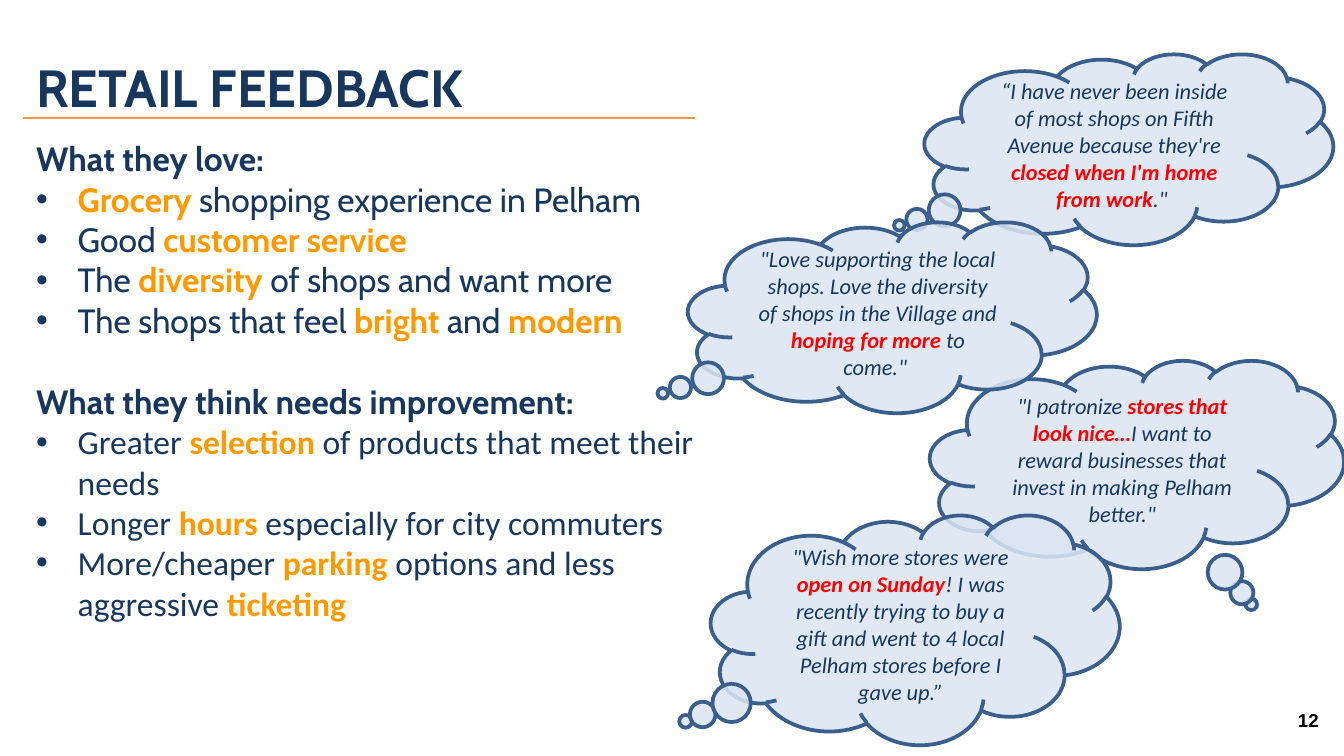
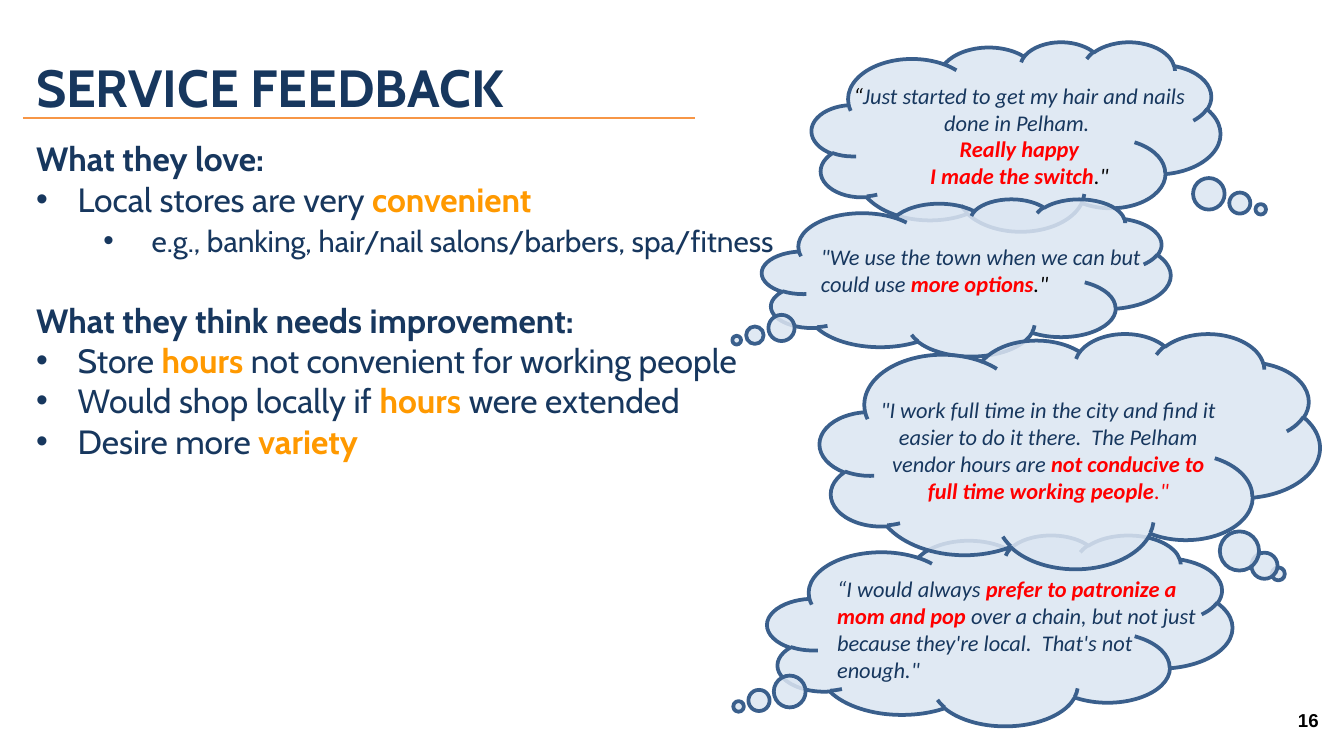
from lxml.etree import SubElement
from pptx import Presentation
from pptx.dml.color import RGBColor
from pptx.enum.shapes import MSO_CONNECTOR, MSO_SHAPE
from pptx.enum.text import MSO_ANCHOR, PP_ALIGN
from pptx.oxml.ns import qn
from pptx.util import Inches, Pt

COLORS = {
    "navy": "17375E", "amber": "FF9900", "rule": "F79646", "red": "FF0000",
    "cloud": "DCE6F2", "outline": "3A5F8C", "black": "000000",
}
# Marks that switch a run format on and off: (colour or None for accent, bold)
MARKS = {"*": (None, True), "~": ("black", False), "^": ("red", False)}
QUOTE = {"font": "Calibri", "size": 12, "italic": True, "accent": "red"}
BULLET = {"indent": 0.31, "hanging": 0.31}
SUB_BULLET = {"indent": 0.86, "hanging": 0.36, "size": 16, "before": 2}
LEFT_TAIL = (-0.562, 0.399)


def rgb(name):
    return RGBColor.from_string(COLORS[name])


def split_runs(marked):
    """Yield (text, mark) pieces; mark is None for plain text."""
    mark, piece = None, ""
    for char in marked:
        if char in MARKS:
            if piece:
                yield piece, mark
            mark, piece = (None if mark == char else char), ""
        else:
            piece += char
    if piece:
        yield piece, mark


def write(paragraph, marked, font="Cabin", size=18, color="navy", bold=False,
          italic=False, accent="amber", align=PP_ALIGN.LEFT, before=0,
          indent=0, hanging=0):
    paragraph.alignment = align
    paragraph.space_before = Pt(before)
    for number, line in enumerate(marked.split("\n")):
        if number:
            paragraph.add_line_break()
        for text, mark in split_runs(line):
            run_color, run_bold = MARKS[mark] if mark else (color, bold)
            run = paragraph.add_run()
            run.text = text
            run.font.name = font
            run.font.size = Pt(size)
            run.font.bold = run_bold
            run.font.italic = italic
            run.font.color.rgb = rgb(run_color or accent)
    if hanging:
        props = paragraph._p.get_or_add_pPr()
        props.set("marL", str(Inches(indent)))
        props.set("indent", str(-Inches(hanging)))
        bullet_color = SubElement(props, qn("a:buClr"))
        SubElement(bullet_color, qn("a:srgbClr"), val=COLORS[color])
        SubElement(props, qn("a:buFont"), typeface="Arial")
        SubElement(props, qn("a:buChar"), char="•")


def write_all(frame, items):
    """Fill a text frame from (marked text, format) pairs."""
    for number, (marked, style) in enumerate(items):
        paragraph = frame.add_paragraph() if number else frame.paragraphs[0]
        write(paragraph, marked, **style)


def add_text(slide, box, items, anchor=MSO_ANCHOR.TOP):
    frame = slide.shapes.add_textbox(*map(Inches, box)).text_frame
    frame.word_wrap = True
    frame.vertical_anchor = anchor
    write_all(frame, items)


def add_cloud(slide, box, tail=LEFT_TAIL, quote=None):
    cloud = slide.shapes.add_shape(MSO_SHAPE.CLOUD_CALLOUT, *map(Inches, box))
    cloud.adjustments[0], cloud.adjustments[1] = tail
    cloud.shadow.inherit = False
    cloud.fill.solid()
    cloud.fill.fore_color.rgb = rgb("cloud")
    fill_color = cloud._element.spPr.find(qn("a:solidFill"))[0]
    SubElement(fill_color, qn("a:alpha"), val="86000")
    cloud.line.color.rgb = rgb("outline")
    cloud.line.width = Pt(2)
    if quote:
        cloud.text_frame.word_wrap = True
        cloud.text_frame.vertical_anchor = MSO_ANCHOR.MIDDLE
        write_all(cloud.text_frame, [(quote, QUOTE | {"align": PP_ALIGN.CENTER})])


def add_quote(slide, box, lines, align=PP_ALIGN.LEFT):
    add_text(slide, box, [(line, QUOTE | {"align": align}) for line in lines])


def add_header(slide, title, page):
    add_text(slide, (0.17, 0.23, 9.65, 0.83),
             [(title, {"size": 28, "bold": True})], MSO_ANCHOR.MIDDLE)
    rule = slide.shapes.add_connector(
        MSO_CONNECTOR.STRAIGHT, *map(Inches, (0.17, 0.88, 5.17, 0.88)))
    rule.line.color.rgb = rgb("rule")
    rule.line.width = Pt(1.25)
    SubElement(rule._element.spPr, qn("a:effectLst"))
    number = {"font": "Arial", "size": 10, "bold": True, "color": "black",
              "align": PP_ALIGN.RIGHT}
    add_text(slide, (7.58, 5.21, 2.33, 0.3), [(page, number)], MSO_ANCHOR.MIDDLE)


def add_feedback(slide, box, loves, improvements, improvement_font="Cabin"):
    heading = {"bold": True}
    items = [("What they love:", heading), *loves,
             ("What they think needs improvement:", heading | {"before": 22})]
    items += [(text, BULLET | {"font": improvement_font}) for text in improvements]
    add_text(slide, box, items)


def build_retail(slide):
    # Thought clouds, from back to front
    add_cloud(slide, (6.92, 2.68, 3.08, 1.55), (0.276, 0.672),
              '"I patronize *stores that look nice…*I want to reward businesses '
              'that invest in making Pelham better."')
    add_cloud(slide, (6.88, 0.4, 3.04, 1.42), quote=(
        "“I have never been inside of most shops on Fifth Avenue because "
        "they're *closed when I'm home from work*.\" "))
    add_cloud(slide, (5.12, 1.65, 3.04, 1.42), quote=(
        '"Love supporting the local shops. Love the diversity of shops in the '
        'Village and *hoping for more* to come." '))
    add_cloud(slide, (5.29, 3.83, 3.04, 1.71), quote=(
        '"Wish more stores were *open on Sunday*! I was recently trying to buy '
        'a gift and went to 4 local Pelham stores before I gave up.”'))
    # Title and findings
    add_header(slide, "RETAIL FEEDBACK", "12")
    loves = ["*Grocery *shopping experience in Pelham",
             "Good *customer service*",
             "The *diversity *of shops and want more",
             "The shops that feel *bright *and *modern*"]
    add_feedback(
        slide, (0.17, 0.98, 5.12, 3.94), [(text, BULLET) for text in loves],
        ["Greater *selection *of products that meet their needs",
         "Longer *hours *especially for city commuters",
         "More/cheaper *parking *options and less aggressive *ticketing*"],
        improvement_font="Calibri")


def build_service(slide):
    # Thought clouds, from back to front
    add_cloud(slide, (6.04, 0.31, 3.04, 1.41), (0.599, 0.385))
    add_cloud(slide, (5.67, 1.48, 3.04, 1.17))
    add_cloud(slide, (5.71, 3.98, 3.46, 1.42))
    add_cloud(slide, (6.1, 2.48, 3.72, 1.75), (0.417, 0.523))
    # Title and findings
    add_header(slide, "SERVICE FEEDBACK", "16")
    add_feedback(
        slide, (0.17, 0.98, 6.58, 3.67),
        [("Local stores are very *convenient*", BULLET),
         ("e.g., banking, hair/nail salons/barbers, spa/fitness", SUB_BULLET)],
        ["Store *hours *not convenient for working people",
         "Would shop locally if *hours *were extended",
         "Desire more *variety*"])
    # Quotes over the clouds
    add_quote(slide, (6.24, 0.56, 2.69, 0.91),
              ["~“~Just started to get my hair and nails done in Pelham. \n"
               "*Really happy*", '*I made the switch*~."~'], PP_ALIGN.CENTER)
    add_quote(slide, (6.01, 1.76, 2.69, 0.5),
              ['"We use the town when we can but could use *more options*~."~'])
    add_quote(slide, (6.44, 2.9, 2.72, 0.91),
              ['"I work full time in the city and find it easier to do it there. '
               ' The Pelham vendor hours are *not conducive to full time '
               'working people*^."^'], PP_ALIGN.CENTER)
    add_quote(slide, (6.13, 4.23, 2.92, 0.91),
              ["“I would always *prefer to patronize a mom and pop *over a chain, "
               "but not just because they're local.  That's not enough.\""])


def main():
    deck = Presentation()
    # Widescreen, 16 to 9
    deck.slide_width = Inches(10)
    deck.slide_height = Inches(10) * 9 // 16
    for build in (build_retail, build_service):
        build(deck.slides.add_slide(deck.slide_layouts[6]))
    deck.save("out.pptx")


if __name__ == "__main__":
    main()
